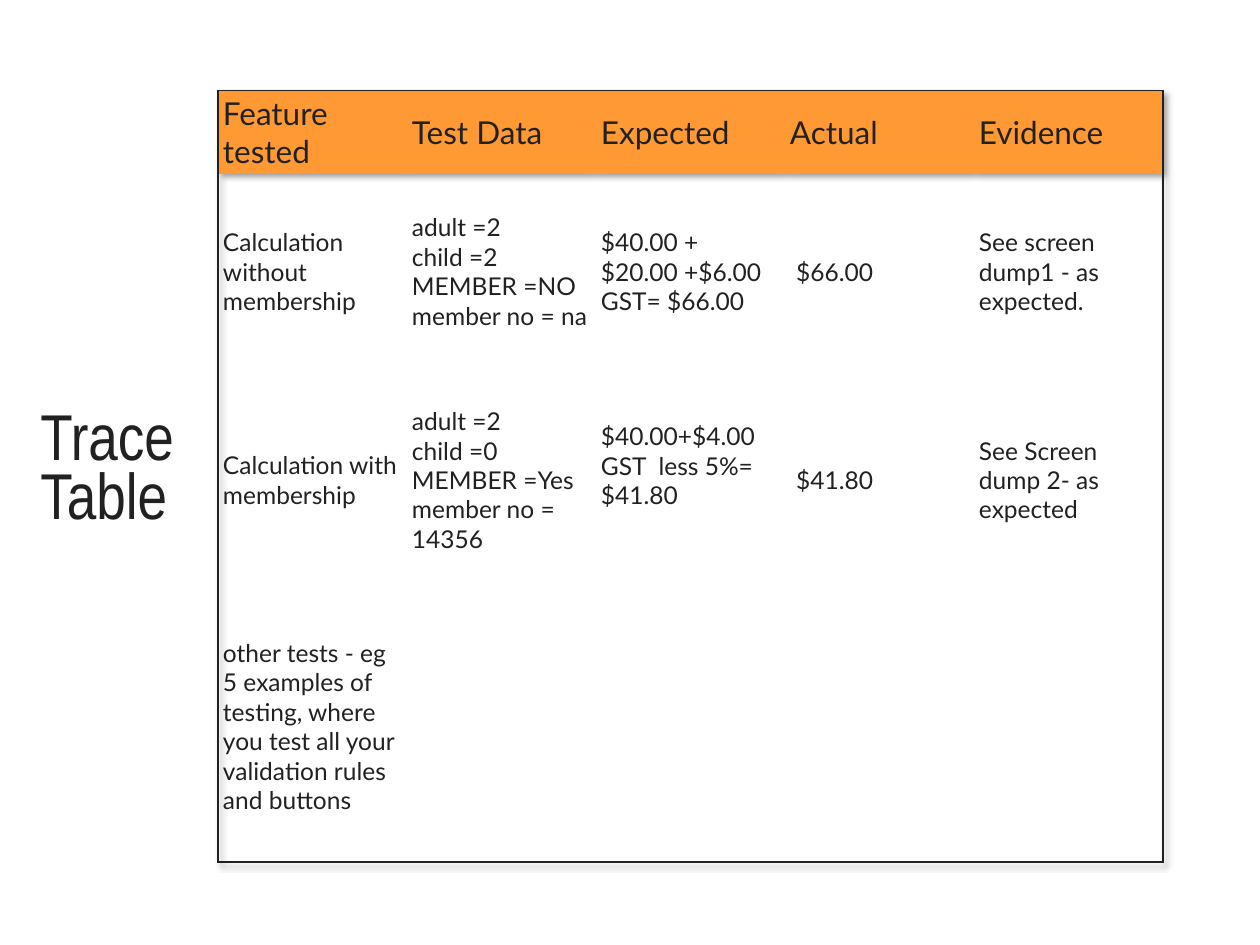
from lxml import etree
from pptx import Presentation
from pptx import util as u
from pptx.dml.color import RGBColor
from pptx.enum import text
from pptx.oxml import ns

INK = "212121"
ORANGE = "FF9933"
NO_STYLE = "{2D5ABB26-0587-4C30-8999-92F81FD0307C}"

ROW_HEIGHTS = [0.65, 1.55, 1.76, 2.15]
COLUMN_WIDTH = 1.5
ROWS = [
    ["Feature tested", "Test Data", "Expected", "Actual", "Evidence"],
    ["Calculation without membership",
     "adult =2\nchild =2\nMEMBER =NO\nmember no = na",
     "$40.00 + $20.00 +$6.00 GST= $66.00",
     " $66.00",
     "See screen dump1 - as expected."],
    ["Calculation with membership",
     "adult =2\nchild =0\nMEMBER =Yes\nmember no = 14356",
     "$40.00+$4.00 GST  less 5%=  $41.80",
     " $41.80",
     "See Screen dump 2- as expected"],
    ["other tests - eg 5 examples of testing, where you test all your "
     "validation rules and buttons", "", "", "", ""],
]


def color(value):
    return RGBColor.from_string(value)


def sub(parent, tag, **attrs):
    return etree.SubElement(parent, ns.qn(tag), attrs)


class Deck:
    title_font = "Arial Narrow"
    body_font = "Lato"

    def __init__(self):
        self.prs = Presentation()
        self.prs.slide_width = u.Inches(10)
        self.prs.slide_height = u.Inches(7.5)
        self.s = self.prs.slides.add_slide(self.prs.slide_layouts[5])

    def paragraph(self, tf, words, size, font):
        """Fill the frame with one left-aligned paragraph, keeping line breaks."""
        p = tf.paragraphs[0]
        p.text = words.replace("\n", "\v")
        p.alignment = text.PP_ALIGN.LEFT
        p.font.size = u.Pt(size)
        p.font.name = font
        p.font.color.rgb = color(INK)
        return p

    def title(self, words, left, top, width, height):
        sp = self.s.shapes.title
        sp.left, sp.top = u.Inches(left), u.Inches(top)
        sp.width, sp.height = u.Inches(width), u.Inches(height)
        tf = sp.text_frame
        tf.word_wrap = True
        tf.auto_size = text.MSO_AUTO_SIZE.NONE
        tf.vertical_anchor = text.MSO_ANCHOR.MIDDLE
        tf.margin_left = tf.margin_right = u.Inches(0.04)
        tf.margin_top = tf.margin_bottom = u.Inches(0.02)
        self.paragraph(tf, words, 37, self.title_font).line_spacing = 0.75

    def cell(self, cell, words, size, fill, sides):
        cell.vertical_anchor = text.MSO_ANCHOR.MIDDLE
        cell.margin_left = cell.margin_right = u.Inches(0.04)
        cell.margin_top = cell.margin_bottom = u.Inches(0.03)
        self.paragraph(cell.text_frame, words, size, self.body_font)
        if fill:
            cell.fill.solid()
            cell.fill.fore_color.rgb = color(fill)
        else:
            cell.fill.background()
        self.borders(cell, sides)

    def borders(self, cell, sides):
        """Draw only the named sides; border elements must precede the fill."""
        tc_pr = cell._tc.get_or_add_tcPr()
        for i, side in enumerate("LRTB"):
            ln = sub(tc_pr, "a:ln" + side, w=str(u.Pt(1)))
            if side in sides:
                sub(sub(ln, "a:solidFill"), "a:srgbClr", val=INK)
            else:
                sub(ln, "a:noFill")
            tc_pr.insert(i, ln)

    def table_shadow(self, table):
        tbl_pr = table._tbl.tblPr
        effects = sub(tbl_pr, "a:effectLst")
        shadow = sub(effects, "a:outerShdw", blurRad="40000", dist="35000",
                     dir="2700000", rotWithShape="0")
        sub(sub(shadow, "a:srgbClr", val="000000"), "a:alpha", val="40000")
        tbl_pr.insert(0, effects)

    def table(self, rows, left, top, column_width, row_heights):
        n_rows, n_cols = len(rows), len(rows[0])
        table = self.s.shapes.add_table(
            n_rows, n_cols, u.Inches(left), u.Inches(top),
            u.Inches(column_width * n_cols), u.Inches(sum(row_heights))).table
        table._tbl.tblPr.find(ns.qn("a:tableStyleId")).text = NO_STYLE
        table.horz_banding = False
        self.table_shadow(table)
        for column in table.columns:
            column.width = u.Inches(column_width)
        for r, (row, height) in enumerate(zip(rows, row_heights)):
            table.rows[r].height = u.Inches(height)
            for c, words in enumerate(row):
                edges = {"L": c == 0, "R": c == n_cols - 1,
                         "T": r == 0, "B": r == n_rows - 1}
                self.cell(table.cell(r, c), words, 14 if r else 18,
                          None if r else ORANGE,
                          [side for side, outer in edges.items() if outer])
        return table


def main():
    deck = Deck()
    deck.title("Trace\nTable", 0.28, 3.26, 2.95, 0.98)
    table = deck.table(ROWS, 1.73, 0.72, COLUMN_WIDTH, ROW_HEIGHTS)
    # The discounted total sits half a line above the middle of its row.
    table.cell(2, 2).margin_bottom = u.Inches(0.26)
    deck.prs.save("out.pptx")


if __name__ == "__main__":
    main()
